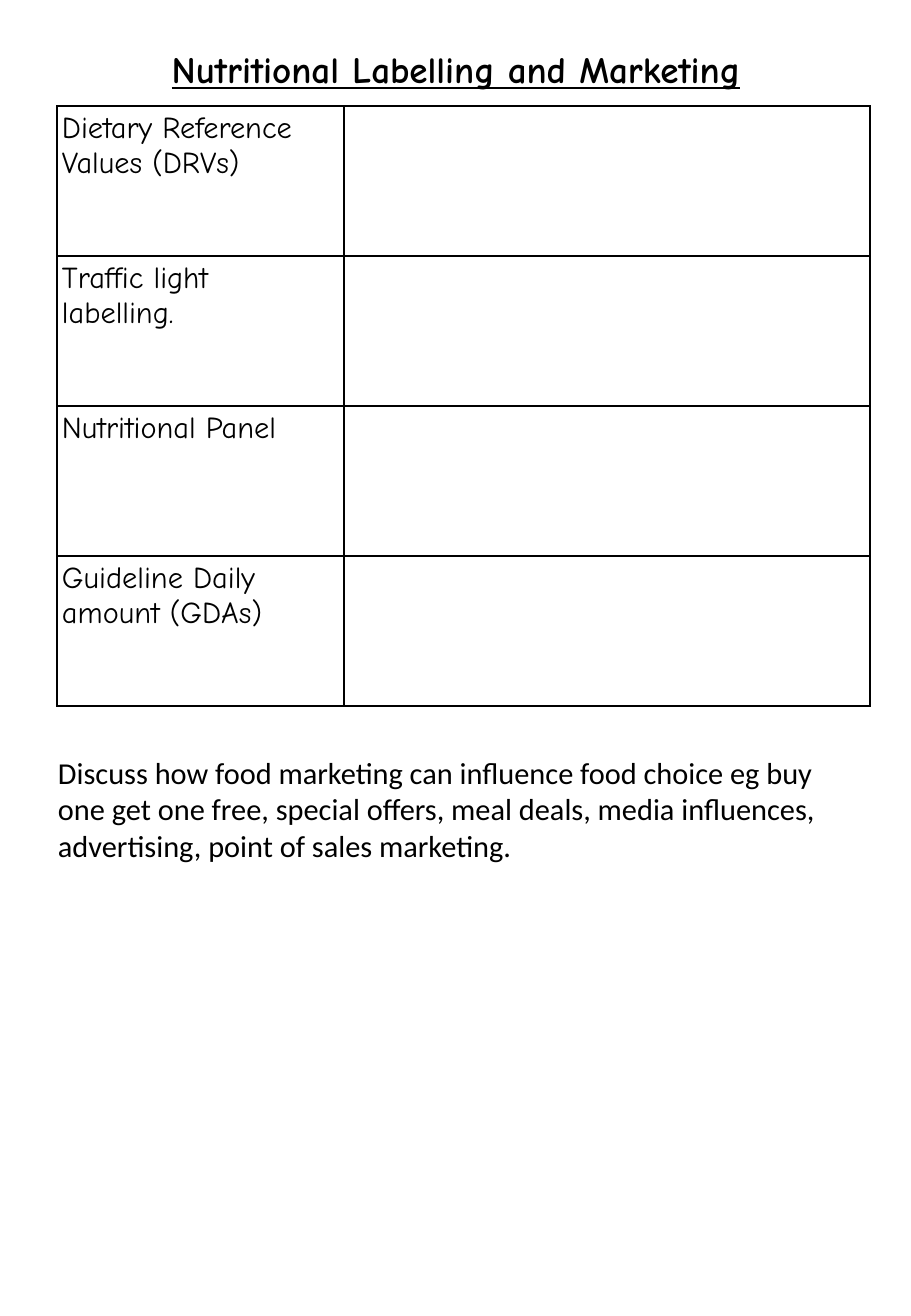
from lxml import etree
from pptx import Presentation, util as u
from pptx.dml.color import RGBColor
from pptx.enum import text
from pptx.oxml import ns

BLACK = RGBColor(0, 0, 0)
COMIC = "Comic Neue"
BODY = "Calibri"
SCALE = 914400 / 121.5
TERMS = [
    "Dietary Reference Values (DRVs)",
    "Traffic light\nlabelling.",
    "Nutritional Panel",
    "Guideline Daily amount (GDAs)",
]


def px(n):
    return u.Emu(round(n * SCALE))


def write(frame, words, font=COMIC, size=18, bold=False, line=False,
          align=text.PP_ALIGN.LEFT):
    """Fill a text frame, one paragraph per line of words."""
    frame.word_wrap = True
    for i, part in enumerate(words.split("\n")):
        para = frame.add_paragraph() if i else frame.paragraphs[0]
        para.alignment = align
        run = para.add_run()
        run.text = part
        run.font.name = font
        run.font.size = u.Pt(size)
        run.font.bold = bold
        run.font.underline = line
        run.font.color.rgb = BLACK


def border(cell):
    props = cell._tc.get_or_add_tcPr()
    for side in ("a:lnL", "a:lnR", "a:lnT", "a:lnB"):
        edge = etree.SubElement(props, ns.qn(side), w=str(u.Pt(1)))
        fill = etree.SubElement(edge, ns.qn("a:solidFill"))
        etree.SubElement(fill, ns.qn("a:srgbClr"), val=str(BLACK))


def label(slide, box, words, anchor=text.MSO_ANCHOR.TOP, **style):
    frame = slide.shapes.add_textbox(*map(px, box)).text_frame
    frame.vertical_anchor = anchor
    write(frame, words, **style)


def grid(slide, box, terms, first):
    """Draw the terms in a first column, with blank cells for answers."""
    left, top, width, height = box
    table = slide.shapes.add_table(len(terms), 2, *map(px, box)).table
    table.first_row = table.horz_banding = False
    table.columns[0].width = px(first)
    table.columns[1].width = px(width - first)
    for row, term in zip(table.rows, terms):
        row.height = px(height / len(terms))
        for cell in row.cells:
            cell.margin_left = cell.margin_right = px(5)
            cell.margin_top = cell.margin_bottom = px(5)
            border(cell)
            cell.fill.background()
        write(row.cells[0].text_frame, term)


def main():
    deck = Presentation()
    deck.slide_width, deck.slide_height = px(911), px(1316)
    slide = deck.slides.add_slide(deck.slide_layouts[6])
    label(slide, (46, 34, 820, 70), "Nutritional Labelling and Marketing",
          anchor=text.MSO_ANCHOR.MIDDLE, size=22, bold=True, line=True,
          align=text.PP_ALIGN.CENTER)
    grid(slide, (57, 106, 813, 600), TERMS, first=287)
    label(slide, (46, 748, 820, 527),
          "Discuss how food marketing can influence food choice eg buy one "
          "get one free, special offers, meal deals, media influences, "
          "advertising, point of sales marketing.", font=BODY)
    deck.save("out.pptx")


if __name__ == "__main__":
    main()
